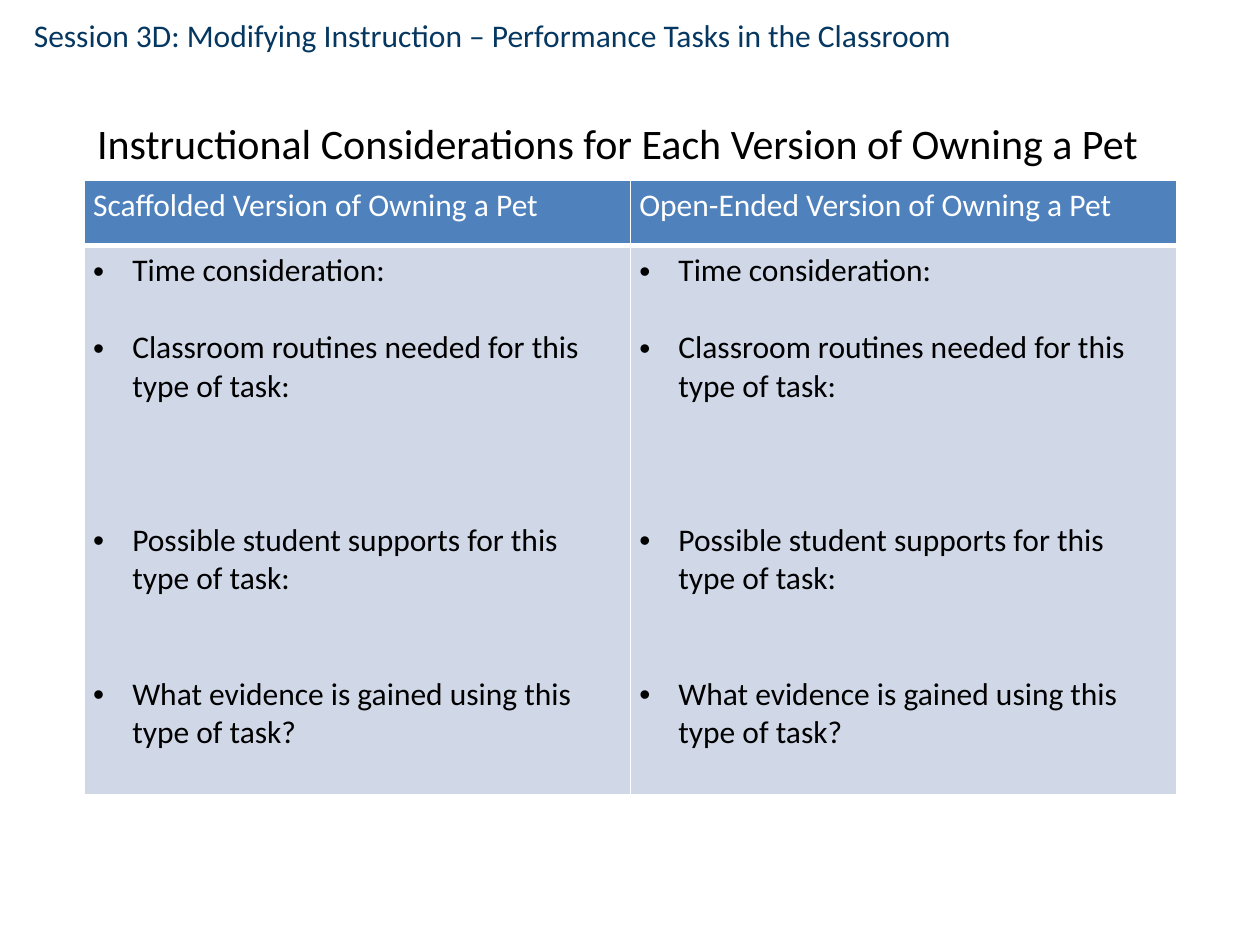
"""Build the slide comparing instructional considerations for two task versions."""
from dataclasses import dataclass

from lxml import etree
from pptx import Presentation, util as u
from pptx.dml.color import RGBColor
from pptx.enum import text
from pptx.oxml import ns


@dataclass(frozen=True)
class Theme:
    font: str = "Calibri"
    title_size: int = 24
    body_size: int = 18
    navy: str = "053760"
    black: str = "000000"
    white: str = "FFFFFF"
    header_fill: str = "4F81BD"
    body_fill: str = "D0D8E8"


theme = Theme()


def add_run(p, words, size, color):
    r = p.add_run()
    r.text = words
    r.font.name = theme.font
    r.font.size = u.Pt(size)
    r.font.color.rgb = RGBColor.from_string(color)


def style_cell(cell, fill, bottom_width):
    cell.margin_left = cell.margin_right = u.Inches(0.07)
    cell.margin_top = cell.margin_bottom = u.Inches(0.05)
    tcPr = cell._tc.get_or_add_tcPr()
    for side, width in (("L", 1), ("R", 1), ("T", 1), ("B", bottom_width)):
        ln = etree.SubElement(tcPr, ns.qn(f"a:ln{side}"), w=str(u.Pt(width)))
        solid = etree.SubElement(ln, ns.qn("a:solidFill"))
        etree.SubElement(solid, ns.qn("a:srgbClr"), val=theme.white)
    cell.fill.solid()
    cell.fill.fore_color.rgb = RGBColor.from_string(fill)


prs = Presentation()
prs.slide_width, prs.slide_height = u.Inches(10), u.Inches(7.5)
s = prs.slides.add_slide(prs.slide_layouts[5])

title = s.shapes.title
title.left, title.top = u.Inches(0.67), u.Inches(0.88)
title.width, title.height = u.Inches(8.58), u.Inches(0.62)
tf = title.text_frame
tf.auto_size = text.MSO_AUTO_SIZE.NONE
tf.vertical_anchor = text.MSO_ANCHOR.TOP
p = tf.paragraphs[0]
p.alignment = text.PP_ALIGN.LEFT
add_run(p, "Instructional Considerations for Each Version of Owning a Pet",
        theme.title_size, theme.black)

headers = ["Scaffolded Version of Owning a Pet", "Open-Ended Version of Owning a Pet"]
considerations = [
    ("Time consideration:", 0),
    ("Classroom routines needed for this type of task:", 22),
    ("Possible student supports for this type of task:", 66),
    ("What evidence is gained using this type of task?", 44),
]
table = s.shapes.add_table(2, len(headers), u.Inches(0.67), u.Inches(1.43),
                           u.Inches(8.67), u.Inches(4.88)).table
table.rows[0].height = u.Inches(0.52)
table.rows[1].height = u.Inches(4.36)

for col, header in enumerate(headers):
    head, body = table.cell(0, col), table.cell(1, col)
    style_cell(head, theme.header_fill, 3)
    style_cell(body, theme.body_fill, 1)
    add_run(head.text_frame.paragraphs[0], header, theme.body_size, theme.white)
    tf = body.text_frame
    for i, (words, gap) in enumerate(considerations):
        p = tf.add_paragraph() if i else tf.paragraphs[0]
        pPr = p._p.get_or_add_pPr()
        pPr.set("marL", str(u.Inches(0.31)))
        pPr.set("indent", str(-u.Inches(0.31)))
        etree.SubElement(pPr, ns.qn("a:buFont"), typeface="Arial")
        etree.SubElement(pPr, ns.qn("a:buChar"), char="•")
        if gap:
            p.space_before = u.Pt(gap)
        add_run(p, words, theme.body_size, theme.black)

sp = s.shapes.add_textbox(u.Inches(0.17), u.Inches(0.08), u.Inches(7.59), u.Inches(0.4))
tf = sp.text_frame
tf.word_wrap = False
tf.auto_size = text.MSO_AUTO_SIZE.SHAPE_TO_FIT_TEXT
add_run(tf.paragraphs[0],
        "Session 3D: Modifying Instruction – Performance Tasks in the Classroom",
        theme.body_size, theme.navy)

prs.save("out.pptx")
